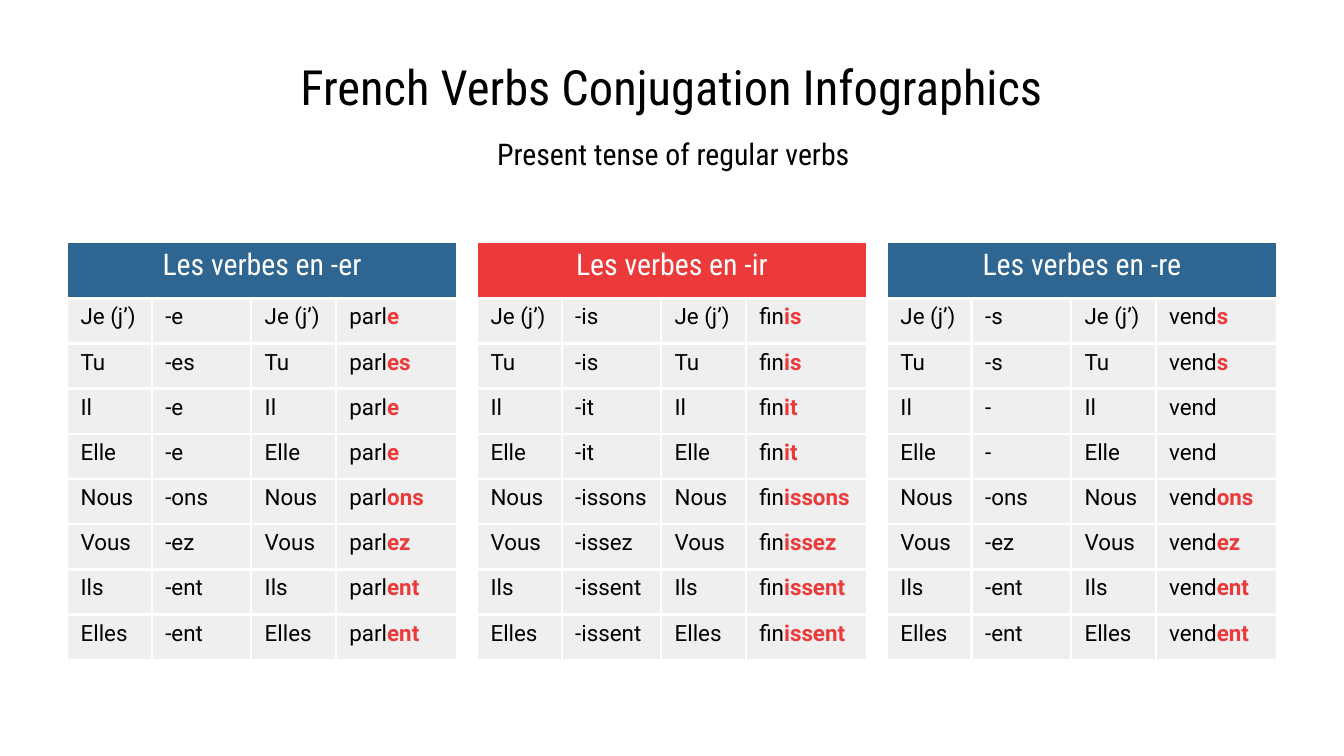
from lxml.etree import SubElement
from pptx import Presentation
from pptx.dml.color import RGBColor
from pptx.enum.text import MSO_ANCHOR, MSO_AUTO_SIZE, PP_ALIGN
from pptx.oxml.ns import qn
from pptx.util import Inches, Pt

BLUE = RGBColor(0x2F, 0x66, 0x91)
RED = RGBColor(0xEC, 0x3A, 0x3B)
GREY = RGBColor(0xEF, 0xEF, 0xEF)
BLACK = RGBColor(0, 0, 0)
WHITE = RGBColor(0xFF, 0xFF, 0xFF)

HEADING_FONT = "Roboto Condensed"
BODY_FONT = "Roboto"
MARGIN = Inches(0.1)

PRONOUNS = ["Je (j’)", "Tu", "Il", "Elle", "Nous", "Vous", "Ils", "Elles"]
VERB_GROUPS = [
    ("Les verbes en -er", BLUE, "parl", ["e", "es", "e", "e", "ons", "ez", "ent", "ent"]),
    ("Les verbes en -ir", RED, "fin",
     ["is", "is", "it", "it", "issons", "issez", "issent", "issent"]),
    ("Les verbes en -re", BLUE, "vend", ["s", "s", "", "", "ons", "ez", "ent", "ent"]),
]
COLUMN_WIDTHS = [0.63, 0.74, 0.63, 0.9]
HEADER_HEIGHT, BODY_HEIGHT = 0.42, 2.69
ROW_HEIGHT = BODY_HEIGHT / len(PRONOUNS)
TABLES_LEFT, TABLES_TOP, TABLE_PITCH = 0.5, 1.8, 3.05


def add_run(paragraph, words, size, font_name, color, bold=False):
    """Append one formatted run to a paragraph."""
    run = paragraph.add_run()
    run.text = words
    run.font.size = Pt(size)
    run.font.name = font_name
    run.font.bold = bold
    run.font.color.rgb = color


def write_heading(holder, words, size, anchor):
    """Write a centred heading into a title or a text box."""
    frame = holder.text_frame
    frame.word_wrap = True
    frame.auto_size = MSO_AUTO_SIZE.NONE
    frame.vertical_anchor = anchor
    frame.margin_left = frame.margin_right = MARGIN
    frame.margin_top = frame.margin_bottom = MARGIN
    paragraph = frame.paragraphs[0]
    paragraph.alignment = PP_ALIGN.CENTER
    add_run(paragraph, words, size, HEADING_FONT, BLACK)


def style_cell(cell, fill_color):
    """Give a cell white borders, a fill and even margins."""
    properties = cell._tc.get_or_add_tcPr()
    for side in ("a:lnL", "a:lnR", "a:lnT", "a:lnB"):
        border = SubElement(properties, qn(side), w=str(Pt(1.5)))
        paint = SubElement(border, qn("a:solidFill"))
        SubElement(paint, qn("a:srgbClr"), val=str(WHITE))
    cell.fill.solid()
    cell.fill.fore_color.rgb = fill_color
    cell.vertical_anchor = MSO_ANCHOR.MIDDLE
    cell.margin_left = cell.margin_right = MARGIN
    cell.margin_top = cell.margin_bottom = MARGIN
    cell.text_frame.paragraphs[0].line_spacing = 0.5


def fill_header(table, heading, color):
    """Merge the first row into one coloured heading."""
    for cell in table.rows[0].cells:
        style_cell(cell, color)
    header = table.cell(0, 0)
    header.merge(table.cell(0, len(COLUMN_WIDTHS) - 1))
    paragraph = header.text_frame.paragraphs[0]
    paragraph.alignment = PP_ALIGN.CENTER
    add_run(paragraph, heading, 16, HEADING_FONT, WHITE)


def fill_conjugation(row, pronoun, stem, ending):
    """Write pronoun, ending, pronoun and conjugated verb into a row."""
    for cell, words in zip(row.cells, [pronoun, f"-{ending}", pronoun, stem]):
        style_cell(cell, GREY)
        add_run(cell.text_frame.paragraphs[0], words, 12, BODY_FONT, BLACK)
    if ending:
        verb = row.cells[3].text_frame.paragraphs[0]
        add_run(verb, ending, 12, BODY_FONT, RED, bold=True)


def add_verb_table(slide, left, heading, color, stem, endings):
    """Add the conjugation table of one verb group."""
    table = slide.shapes.add_table(
        len(PRONOUNS) + 1, len(COLUMN_WIDTHS), Inches(left), Inches(TABLES_TOP),
        Inches(sum(COLUMN_WIDTHS)), Inches(HEADER_HEIGHT + BODY_HEIGHT)).table
    table.horz_banding = False
    for column, width in zip(table.columns, COLUMN_WIDTHS):
        column.width = Inches(width)
    for index, row in enumerate(table.rows):
        row.height = Inches(ROW_HEIGHT if index else HEADER_HEIGHT)
    fill_header(table, heading, color)
    for index, (pronoun, ending) in enumerate(zip(PRONOUNS, endings), start=1):
        fill_conjugation(table.rows[index], pronoun, stem, ending)


def main():
    """Build the slide and save it."""
    presentation = Presentation()
    presentation.slide_width = Inches(10)
    presentation.slide_height = presentation.slide_width * 9 // 16
    slide = presentation.slides.add_slide(presentation.slide_layouts[5])

    title = slide.shapes.title
    title.left, title.top = Inches(0.5), Inches(0.45)
    title.width, title.height = Inches(9), Inches(0.51)
    write_heading(title, "French Verbs Conjugation Infographics", 26, MSO_ANCHOR.BOTTOM)

    subtitle = slide.shapes.add_textbox(
        Inches(2.27), Inches(0.96), Inches(5.48), Inches(0.37))
    write_heading(subtitle, "Present tense of regular verbs", 16, MSO_ANCHOR.MIDDLE)

    for index, verb_group in enumerate(VERB_GROUPS):
        add_verb_table(slide, TABLES_LEFT + index * TABLE_PITCH, *verb_group)

    presentation.save("out.pptx")


if __name__ == "__main__":
    main()
